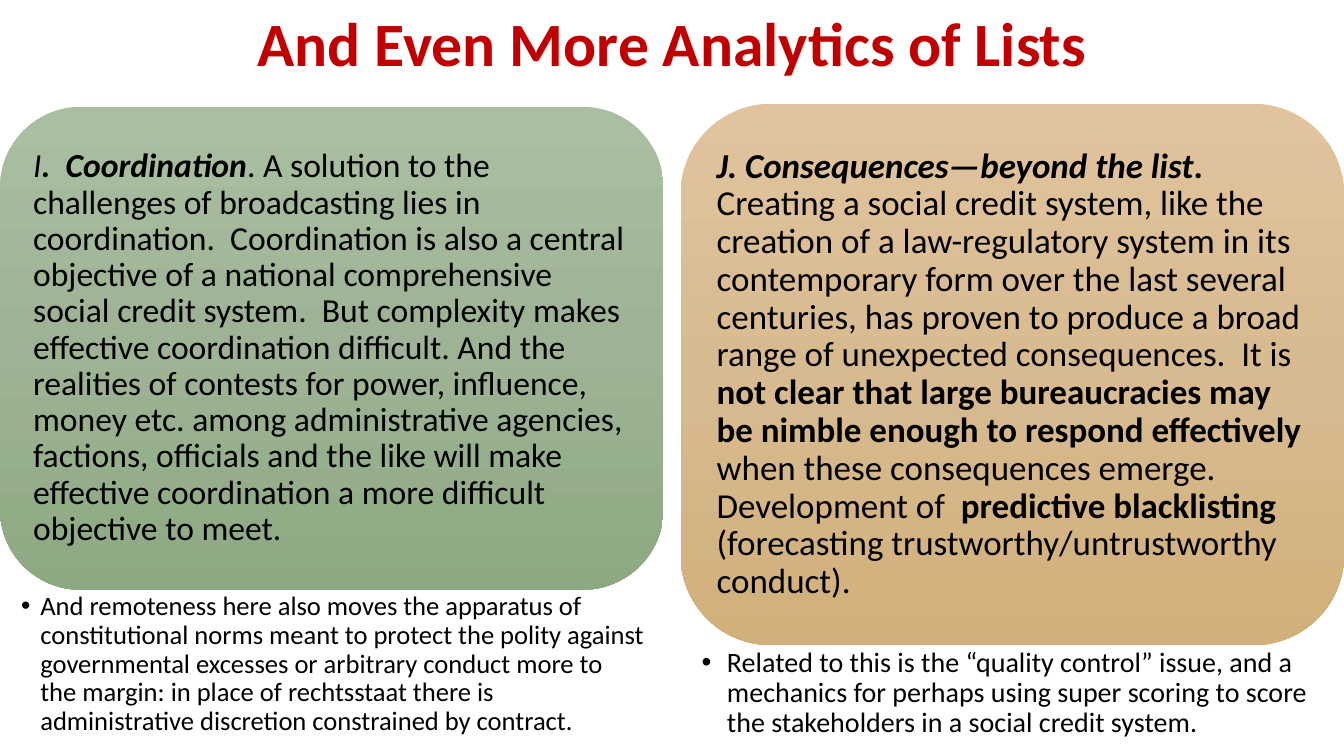
from copy import deepcopy
from dataclasses import dataclass

from lxml import etree
from pptx import Presentation
from pptx.dml.color import RGBColor
from pptx.enum.shapes import MSO_SHAPE
from pptx.enum.text import MSO_ANCHOR, MSO_AUTO_SIZE, PP_ALIGN
from pptx.oxml.ns import qn
from pptx.slide import Slide
from pptx.text.text import TextFrame, _Paragraph
from pptx.util import Inches, Pt

ROUNDED = MSO_SHAPE.ROUNDED_RECTANGLE
MIDDLE, TOP = MSO_ANCHOR.MIDDLE, MSO_ANCHOR.TOP
CENTER, LEFT = PP_ALIGN.CENTER, PP_ALIGN.LEFT
FONT = "Calibri"
RED = RGBColor(0xC0, 0x00, 0x00)
BLACK = RGBColor(0x00, 0x00, 0x00)
GREENS = (RGBColor(0xAA, 0xBE, 0xA2), RGBColor(0x9E, 0xB3, 0x95), RGBColor(0x8D, 0xA9, 0x82))
TANS = (RGBColor(0xE1, 0xC4, 0x9D), RGBColor(0xD7, 0xBA, 0x90), RGBColor(0xD2, 0xB0, 0x7C))
PANEL_WIDTH = 6.58


@dataclass(frozen=True)
class Span:
    text: str
    bold: bool = False
    italic: bool = False


@dataclass(frozen=True)
class Panel:
    left: float
    top: float
    height: float
    inset: float
    colors: tuple[RGBColor, ...]
    size: float
    spans: tuple[Span, ...]
    note_height: float
    note_size: float
    note_indent: float
    note: str


PANELS = (
    Panel(0, 1.06, 4.79, 0.23, GREENS, 24, (
        Span("I", italic=True),
        Span(".  Coordination", bold=True, italic=True),
        Span(". A solution to the challenges of broadcasting lies in coordination.  "
             "Coordination is also a central objective of a national comprehensive social "
             "credit system.  But complexity makes effective coordination difficult. And the "
             "realities of contests for power, influence, money etc. among administrative "
             "agencies, factions, officials and the like will make effective coordination "
             "a more difficult objective to meet."),
    ), 1.52, 19, 0.19,
        "And remoteness here also moves the apparatus of constitutional norms meant to "
        "protect the polity against governmental excesses or arbitrary conduct more to the "
        "margin: in place of rechtsstaat there is administrative discretion constrained "
        "by contract."),
    Panel(6.75, 1.03, 5.37, 0.26, TANS, 25, (
        Span("J. Consequences—beyond the list", bold=True, italic=True),
        Span(". ", bold=True),
        Span("Creating a social credit system, like the creation of a law-regulatory system "
             "in its contemporary form over the last several centuries, has proven to produce "
             "a broad range of unexpected consequences.  It is "),
        Span("not clear that large bureaucracies may be nimble enough to respond "
             "effectively ", bold=True),
        Span("when these consequences emerge.  Development of  "),
        Span("predictive blacklisting ", bold=True),
        Span("(forecasting trustworthy/untrustworthy conduct)."),
    ), 0.99, 20, 0.25,
        "Related to this is the “quality control” issue, and a mechanics for perhaps using "
        "super scoring to score the stakeholders in a social credit system."),
)


def set_frame(tf: TextFrame, margins: tuple[float, float, float, float],
              anchor: MSO_ANCHOR) -> None:
    tf.word_wrap = True
    tf.auto_size = MSO_AUTO_SIZE.NONE
    tf.vertical_anchor = anchor
    tf.margin_left, tf.margin_top, tf.margin_right, tf.margin_bottom = map(Inches, margins)


def add_spans(p: _Paragraph, spans: tuple[Span, ...], size: float, color: RGBColor) -> None:
    p.line_spacing = 0.9
    for span in spans:
        r = p.add_run()
        r.text = span.text
        r.font.name, r.font.size = FONT, Pt(size)
        r.font.bold, r.font.italic = span.bold, span.italic
        r.font.color.rgb = color


def add_bullet(p: _Paragraph, indent: float) -> None:
    pPr = p._p.get_or_add_pPr()
    pPr.set("marL", str(Inches(indent)))
    pPr.set("indent", str(-Inches(indent)))
    etree.SubElement(pPr, qn("a:buFont"), typeface="Arial")
    etree.SubElement(pPr, qn("a:buChar"), char="•")


def add_panel(slide: Slide, panel: Panel) -> None:
    # Rounded card with a three-stop gradient running downwards
    sp = slide.shapes.add_shape(ROUNDED, Inches(panel.left), Inches(panel.top),
                                Inches(PANEL_WIDTH), Inches(panel.height))
    sp.shadow.inherit = False
    sp.line.fill.background()
    sp.fill.gradient()
    sp.fill.gradient_angle = 270
    first = sp._element.spPr.find(".//" + qn("a:gs"))
    middle = deepcopy(first)
    middle.set("pos", "50000")
    first.addnext(middle)
    for stop, color in zip(sp.fill.gradient_stops, panel.colors):
        stop.color.rgb = color

    # Card text
    box = slide.shapes.add_textbox(
        Inches(panel.left + panel.inset), Inches(panel.top + panel.inset),
        Inches(PANEL_WIDTH - 2 * panel.inset), Inches(panel.height - 2 * panel.inset))
    tf = box.text_frame
    set_frame(tf, (0.1, 0.1, 0.1, 0.1), MIDDLE)
    tf.paragraphs[0].alignment = LEFT
    add_spans(tf.paragraphs[0], panel.spans, panel.size, BLACK)

    # Bulleted note under the card
    box = slide.shapes.add_textbox(Inches(panel.left), Inches(panel.top + panel.height),
                                   Inches(PANEL_WIDTH), Inches(panel.note_height))
    tf = box.text_frame
    set_frame(tf, (0.21, 0.03, 0.19, 0.03), TOP)
    p = tf.paragraphs[0]
    add_bullet(p, panel.note_indent)
    add_spans(p, (Span(panel.note),), panel.note_size, BLACK)


def main() -> None:
    prs = Presentation()
    prs.slide_width, prs.slide_height = Inches(13.33), Inches(7.5)
    slide = prs.slides.add_slide(prs.slide_layouts[5])

    # Title
    title = slide.shapes.title
    title.left, title.top = Inches(0.92), Inches(0)
    title.width, title.height = Inches(11.5), Inches(0.93)
    tf = title.text_frame
    set_frame(tf, (0.1, 0.05, 0.1, 0.05), MIDDLE)
    tf.paragraphs[0].alignment = CENTER
    add_spans(tf.paragraphs[0], (Span("And Even More Analytics of Lists", bold=True),), 44, RED)

    # Two panels side by side
    for panel in PANELS:
        add_panel(slide, panel)

    prs.save("out.pptx")


if __name__ == "__main__":
    main()
